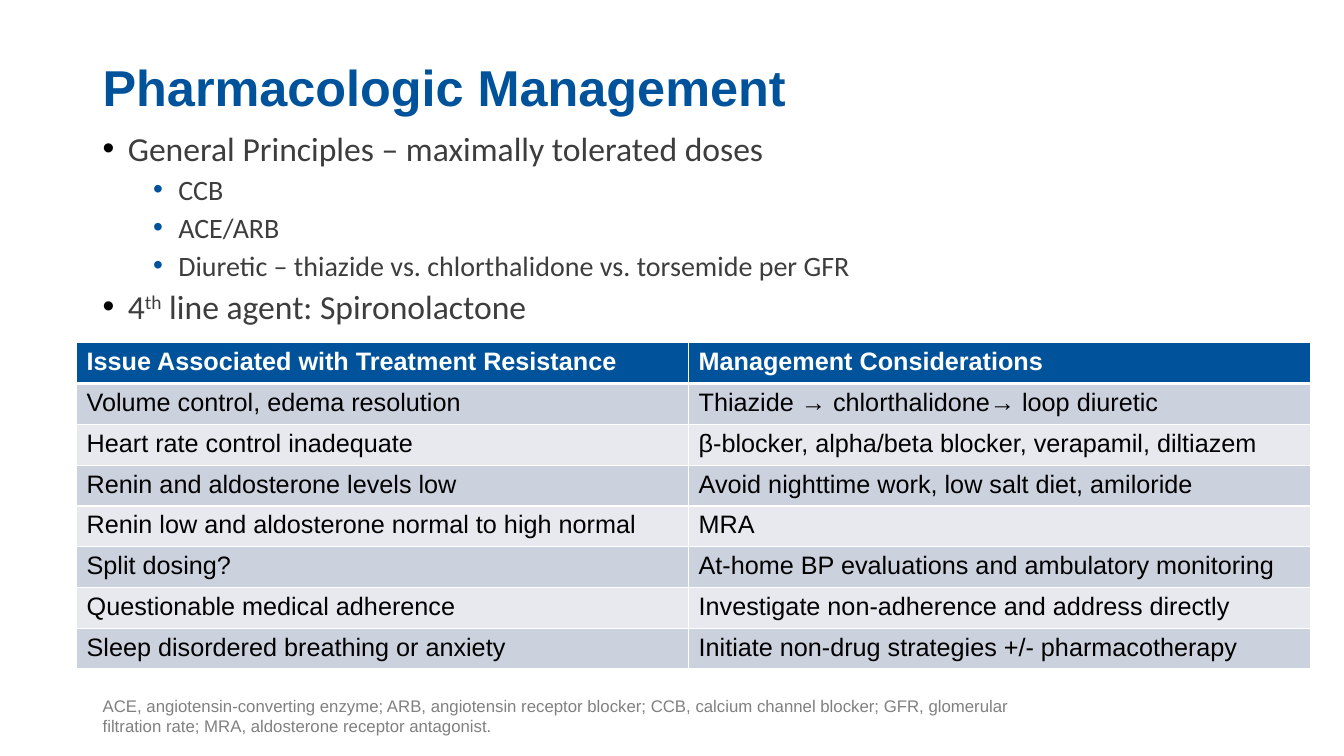
from pptx import Presentation
from pptx.dml.color import RGBColor
from pptx.enum.text import MSO_ANCHOR as Anchor
from pptx.oxml.ns import qn
from pptx.util import Inches, Pt
from lxml.etree import SubElement

BLUE, WHITE, BLACK = "00539B", "FFFFFF", "000000"
BANDS = ("CCD1DE", "E7E9EF")

# Level, then runs of text and whether each is superscript
PRINCIPLES = [
    (0, [("General Principles – maximally tolerated doses", False)]),
    (1, [("CCB", False)]),
    (1, [("ACE/ARB", False)]),
    (1, [("Diuretic – thiazide vs. chlorthalidone vs. torsemide per GFR", False)]),
    (0, [("4", False), ("th", True), (" line agent: Spironolactone", False)]),
]
# Left indent in inches, text size and bullet colour for each level
LEVELS = [(0.25, 24, BLACK), (0.75, 20, BLUE)]

ISSUES = [
    ("Issue Associated with Treatment Resistance", "Management Considerations"),
    ("Volume control, edema resolution", "Thiazide → chlorthalidone→ loop diuretic"),
    ("Heart rate control inadequate", "β-blocker, alpha/beta blocker, verapamil, diltiazem"),
    ("Renin and aldosterone levels low", "Avoid nighttime work, low salt diet, amiloride"),
    ("Renin low and aldosterone normal to high normal", "MRA"),
    ("Split dosing?", "At-home BP evaluations and ambulatory monitoring"),
    ("Questionable medical adherence", "Investigate non-adherence and address directly"),
    ("Sleep disordered breathing or anxiety", "Initiate non-drug strategies +/- pharmacotherapy"),
]
ABBREVIATIONS = (
    "ACE, angiotensin-converting enzyme; ARB, angiotensin receptor blocker; "
    "CCB, calcium channel blocker; GFR, glomerular filtration rate; "
    "MRA, aldosterone receptor antagonist."
)


def color(value):
    return RGBColor.from_string(value)


def add_run(paragraph, text, size=18, fill=BLACK, bold=False, font="Arial", superscript=False):
    run = paragraph.add_run()
    run.text = text
    run.font.name = font
    run.font.size = Pt(size)
    run.font.bold = bold
    run.font.color.rgb = color(fill)
    if superscript:
        run.font._element.set("baseline", "30000")


def add_box(slide, left, top, width, height, anchor=Anchor.TOP):
    box = slide.shapes.add_textbox(Inches(left), Inches(top), Inches(width), Inches(height))
    frame = box.text_frame
    frame.word_wrap = True
    frame.vertical_anchor = anchor
    return frame


def set_bullet(paragraph, indent, fill):
    properties = paragraph._p.get_or_add_pPr()
    properties.set("marL", str(Inches(indent)))
    properties.set("indent", str(-Inches(0.25)))
    bullet_color = SubElement(properties, qn("a:buClr"))
    SubElement(bullet_color, qn("a:srgbClr"), val=fill)
    SubElement(properties, qn("a:buFont"), typeface="Arial")
    SubElement(properties, qn("a:buChar"), char="•")


def add_bullets(slide, items):
    frame = add_box(slide, 0.92, 1.22, 11.5, 2.15)
    for index, (level, runs) in enumerate(items):
        paragraph = frame.add_paragraph() if index else frame.paragraphs[0]
        indent, size, bullet_fill = LEVELS[level]
        paragraph.level = level
        if index:
            paragraph.space_before = Pt(3)
        set_bullet(paragraph, indent, bullet_fill)
        for text, superscript in runs:
            add_run(paragraph, text, size=size, fill="3D3D3D", font="Calibri",
                    superscript=superscript)


def set_borders(cell, **widths):
    properties = cell._tc.get_or_add_tcPr()
    for position, (side, width) in enumerate(widths.items()):
        line = properties.makeelement(qn(f"a:ln{side}"), {"w": str(Pt(width))})
        fill = SubElement(line, qn("a:solidFill"))
        SubElement(fill, qn("a:srgbClr"), val=WHITE)
        properties.insert(position, line)


def add_issue_table(slide, rows):
    column_widths, row_height = (6.07, 6.17), 0.405
    table = slide.shapes.add_table(
        len(rows), len(column_widths), Inches(0.76), Inches(3.4),
        Inches(sum(column_widths)), Inches(row_height * len(rows))).table
    for column, width in zip(table.columns, column_widths):
        column.width = Inches(width)
    for row_index, texts in enumerate(rows):
        header = row_index == 0
        for column_index, text in enumerate(texts):
            cell = table.cell(row_index, column_index)
            cell.fill.solid()
            cell.fill.fore_color.rgb = color(BLUE if header else BANDS[(row_index - 1) % 2])
            add_run(cell.text_frame.paragraphs[0], text,
                    fill=WHITE if header else BLACK, bold=header)
            set_borders(cell, L=1, R=1, T=3 if row_index == 1 else 1, B=3 if header else 1)


def main():
    presentation = Presentation()
    presentation.slide_width, presentation.slide_height = Inches(13.33), Inches(7.5)
    slide = presentation.slides.add_slide(presentation.slide_layouts[6])

    # Title
    title = add_box(slide, 0.92, 0.27, 11.5, 0.94, Anchor.BOTTOM).paragraphs[0]
    title.line_spacing = 0.9
    add_run(title, "Pharmacologic Management", size=36, fill=BLUE, bold=True)

    # Principles and table of issues
    add_bullets(slide, PRINCIPLES)
    add_issue_table(slide, ISSUES)

    # Abbreviations
    footnote = add_box(slide, 0.92, 6.95, 9.73, 0.4, Anchor.BOTTOM).paragraphs[0]
    add_run(footnote, ABBREVIATIONS, size=12, fill="808080")

    presentation.save("out.pptx")


if __name__ == "__main__":
    main()
